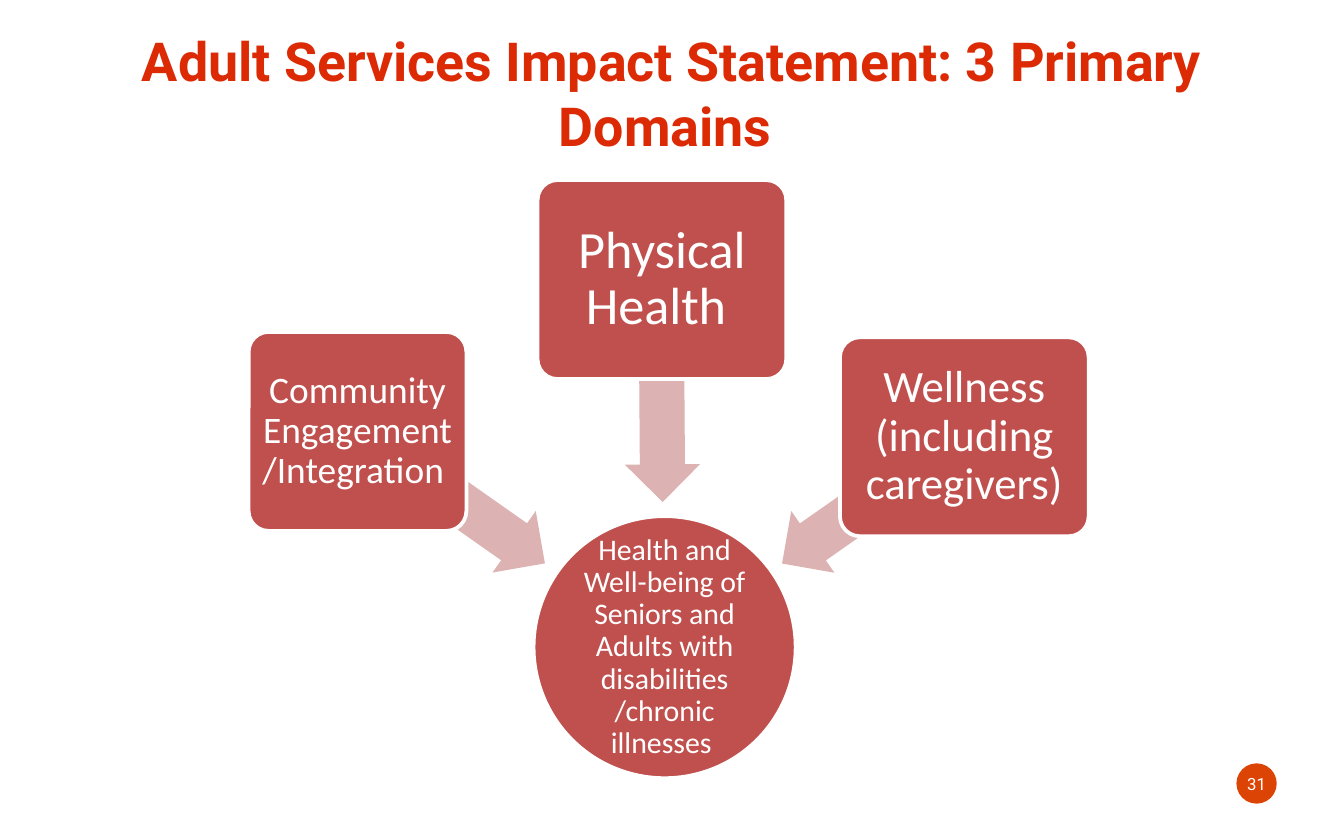
from dataclasses import dataclass

from pptx import Presentation
from pptx.dml.color import RGBColor
from pptx.enum.shapes import MSO_SHAPE as Preset
from pptx.enum.text import MSO_ANCHOR as Anchor, PP_ALIGN as Align
from pptx.shapes.autoshape import Shape
from pptx.slide import Slide
from pptx.util import Inches, Pt


@dataclass(frozen=True)
class Theme:
    title: RGBColor = RGBColor(0xDC, 0x2A, 0x05)
    badge: RGBColor = RGBColor(0xDC, 0x44, 0x05)
    node: RGBColor = RGBColor(0xC0, 0x50, 0x4D)
    arrow: RGBColor = RGBColor(0xDC, 0xB3, 0xB2)
    white: RGBColor = RGBColor(0xFF, 0xFF, 0xFF)
    heading_font: str = "Roboto"
    body_font: str = "Calibri"
    title_size: float = 28.8
    badge_size: float = 9
    goal_size: float = 16
    community_size: float = 20
    wellness_size: float = 24
    physical_size: float = 28
    outline: float = 2


THEME = Theme()


@dataclass(frozen=True)
class Area:
    left: float
    top: float
    width: float
    height: float

    def lengths(self) -> tuple:
        return tuple(Inches(n) for n in (self.left, self.top, self.width, self.height))


@dataclass(frozen=True)
class Node:
    text: str
    area: Area
    size: float
    inset: float


@dataclass(frozen=True)
class Domain:
    node: Node
    arrow: Area
    rotation: float


GOAL = Node(
    "Health and Well-being of Seniors and Adults with disabilities /chronic illnesses ",
    Area(3.97, 3.84, 1.95, 1.95), THEME.goal_size, 0.01)

DOMAINS = [
    Domain(Node("Community Engagement/Integration ", Area(1.85, 2.47, 1.62, 1.48),
                THEME.community_size, 0.04),
           Area(2.5, 3.42, 1.71, 0.56), 215.1),
    Domain(Node("Physical Health ", Area(4, 1.34, 1.85, 1.48), THEME.physical_size, 0.06),
           Area(4.1, 2.63, 1.65, 0.56), 269.6),
    Domain(Node("Wellness (including caregivers)", Area(6.25, 2.51, 1.85, 1.48),
                THEME.wellness_size, 0.05),
           Area(5.67, 3.44, 1.65, 0.56), 325),
]


def write(box: Shape, text: str, font: str, size: float, color: RGBColor,
          inset: float, bold: bool = False, spacing: float = 1.0) -> None:
    frame = box.text_frame
    frame.text = text
    frame.word_wrap = True
    frame.vertical_anchor = Anchor.MIDDLE
    frame.margin_left = frame.margin_right = Inches(inset)
    frame.margin_top = frame.margin_bottom = Inches(inset)
    para = frame.paragraphs[0]
    para.alignment = Align.CENTER
    para.line_spacing = spacing
    for span in para.runs:
        span.font.name = font
        span.font.size = Pt(size)
        span.font.bold = bold
        span.font.color.rgb = color


def add_filled(page: Slide, preset: Preset, area: Area, color: RGBColor) -> Shape:
    shape = page.shapes.add_shape(preset, *area.lengths())
    shape.shadow.inherit = False
    shape.fill.solid()
    shape.fill.fore_color.rgb = color
    shape.line.fill.background()
    return shape


def add_node(page: Slide, node: Node, preset: Preset) -> None:
    shape = add_filled(page, preset, node.area, THEME.node)
    shape.line.color.rgb = THEME.white
    shape.line.width = Pt(THEME.outline)
    if preset == Preset.ROUNDED_RECTANGLE:
        shape.adjustments[0] = 0.1
    write(shape, node.text, THEME.body_font, node.size, THEME.white, node.inset, spacing=0.9)


def add_domain(page: Slide, domain: Domain) -> None:
    arrow = add_filled(page, Preset.LEFT_ARROW, domain.arrow, THEME.arrow)
    arrow.adjustments[0] = 0.6
    arrow.adjustments[1] = 0.5
    arrow.rotation = domain.rotation
    add_node(page, domain.node, Preset.ROUNDED_RECTANGLE)


def main() -> None:
    deck = Presentation()
    deck.slide_width = Inches(10)
    deck.slide_height = Inches(6.25)
    page = deck.slides.add_slide(deck.slide_layouts[6])

    badge = add_filled(page, Preset.OVAL, Area(9.2, 5.68, 0.3, 0.3), THEME.badge)
    write(badge, "31", THEME.heading_font, THEME.badge_size, THEME.white, 0)

    title = page.shapes.add_textbox(*Area(0.5, 0.17, 9, 1.04).lengths())
    write(title, "Adult Services Impact Statement: 3 Primary Domains ",
          THEME.heading_font, THEME.title_size, THEME.title, 0.05, bold=True)

    add_node(page, GOAL, Preset.OVAL)
    for domain in DOMAINS:
        add_domain(page, domain)

    deck.save("out.pptx")


if __name__ == "__main__":
    main()
